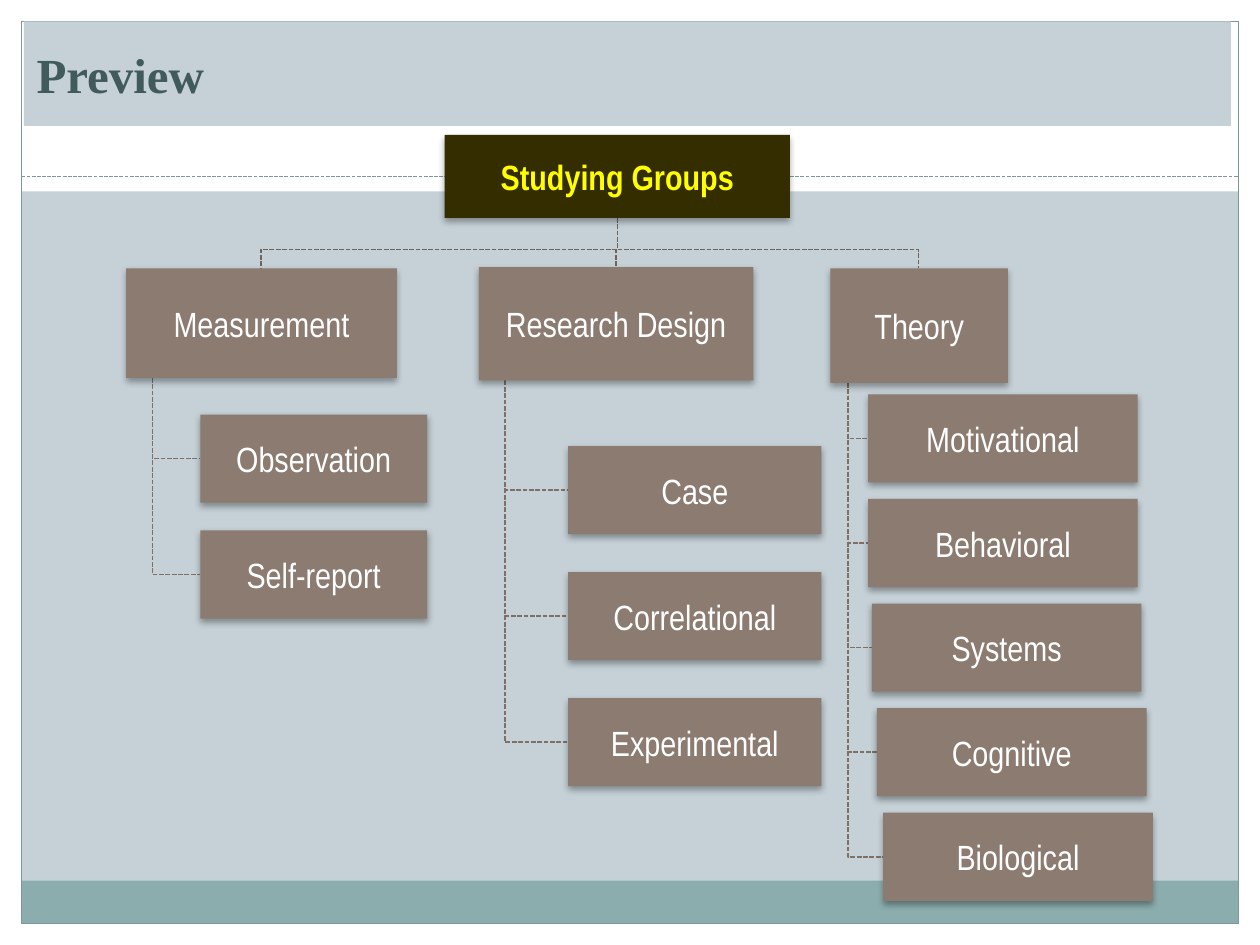
from dataclasses import dataclass
from typing import NamedTuple

from lxml.etree import SubElement
from pptx import Presentation
from pptx.dml.color import RGBColor as Color
from pptx.enum.dml import MSO_LINE_DASH_STYLE as Dash
from pptx.enum.shapes import MSO_CONNECTOR as Link, MSO_SHAPE as Preset
from pptx.enum.text import MSO_ANCHOR as Anchor, MSO_AUTO_SIZE as AutoSize, PP_ALIGN as Align
from pptx.oxml.ns import qn
from pptx.util import Pt

SCALE = 9144
BUS_DROP = 25


@dataclass(frozen=True)
class Theme:
    """Colours, fonts and type sizes of the slide."""
    paper: str = "C5D1D7"
    white: str = "FFFFFF"
    footer: str = "8CADAE"
    rule: str = "7C999A"
    title: str = "415B5C"
    root: str = "332D00"
    root_text: str = "FFFF00"
    node: str = "8C7B70"
    bus: str = "70635A"
    twig: str = "7F7066"
    title_font: str = "Times New Roman"
    node_font: str = "Arial Narrow"
    title_size: int = 28
    node_size: int = 20
    rule_width: float = 0.75
    link_width: float = 0.9


THEME = Theme()


class Box(NamedTuple):
    """A rectangle in px."""
    left: int
    top: int
    width: int
    height: int

    @property
    def bottom(self):
        """Return the lower edge."""
        return self.top + self.height

    @property
    def center(self):
        """Return the horizontal middle."""
        return self.left + self.width // 2

    @property
    def middle(self):
        """Return the vertical middle."""
        return self.top + self.height // 2

    def emu(self):
        """Return the four lengths in EMU."""
        return [value * SCALE for value in self]


def style_line(line, color, width, dash=None):
    """Set the colour, width and dash of a line."""
    line.color.rgb = Color.from_string(color)
    line.width = Pt(width)
    if dash:
        line.dash_style = dash


def add_panel(page, box, fill=None, line=None):
    """Add a flat rectangle."""
    panel = page.shapes.add_shape(Preset.RECTANGLE, *box.emu())
    panel.shadow.inherit = False
    if fill:
        panel.fill.solid()
        panel.fill.fore_color.rgb = Color.from_string(fill)
    else:
        panel.fill.background()
    if line:
        style_line(panel.line, line, THEME.rule_width)
    else:
        panel.line.fill.background()
    return panel


def write(frame, text, *, font, size, color, bold=False, align=Align.LEFT):
    """Write one formatted paragraph, vertically centred."""
    frame.word_wrap = True
    frame.auto_size = AutoSize.NONE
    frame.vertical_anchor = Anchor.MIDDLE
    para = frame.paragraphs[0]
    para.alignment = align
    span = para.add_run()
    span.text = text
    span.font.name = font
    span.font.size = Pt(size)
    span.font.bold = bold
    span.font.color.rgb = Color.from_string(color)


def add_soft_shadow(shape):
    """Give a shape a soft shadow that falls downwards."""
    effects = shape.element.spPr.find(qn("a:effectLst"))
    shadow = SubElement(effects, qn("a:outerShdw"), blurRad=str(Pt(4)),
                        dist=str(Pt(2)), dir="5400000", rotWithShape="0")
    black = SubElement(shadow, qn("a:srgbClr"), val="000000")
    SubElement(black, qn("a:alpha"), val="35000")


def add_node(page, box, text, fill=THEME.node, color=THEME.white, bold=False):
    """Add a labelled box of the chart."""
    node = add_panel(page, box, fill)
    add_soft_shadow(node)
    frame = node.text_frame
    frame.margin_left = frame.margin_right = SCALE
    frame.margin_top = frame.margin_bottom = SCALE
    write(frame, text, font=THEME.node_font, size=THEME.node_size,
          color=color, bold=bold, align=Align.CENTER)


def add_path(page, points, color):
    """Add a dashed open path through the points."""
    builder = page.shapes.build_freeform(*points[0], scale=SCALE)
    builder.add_line_segments(points[1:], close=False)
    path = builder.convert_to_shape()
    path.shadow.inherit = False
    path.fill.background()
    style_line(path.line, color, THEME.link_width, Dash.SQUARE_DOT)


def add_frame(page, box):
    """Add the white margins, footer band, border and dashed rule."""
    edge, footer, head = 17, 34, 152
    right, base = box.width - edge, box.height - edge
    inner = box.width - 2 * edge
    for margin in (Box(0, base, box.width, edge), Box(0, 0, box.width, head),
                   Box(0, 0, edge, box.height), Box(right, 0, edge, box.height)):
        add_panel(page, margin, THEME.white)
    add_panel(page, Box(edge, base - footer, inner, footer), THEME.footer)
    add_panel(page, Box(edge, edge, inner, base - edge), line=THEME.rule)
    height = head - 12
    ends = [value * SCALE for value in (edge, height, right, height)]
    rule = page.shapes.add_connector(Link.STRAIGHT, *ends)
    style_line(rule.line, THEME.rule, THEME.rule_width, Dash.SQUARE_DOT)
    SubElement(rule.element.spPr, qn("a:effectLst"))


def add_title(page, box, text):
    """Place the title in its band, above the frame."""
    title = page.shapes.title
    title.left, title.top, title.width, title.height = box.emu()
    title.fill.solid()
    title.fill.fore_color.rgb = Color.from_string(THEME.paper)
    write(title.text_frame, text, font=THEME.title_font, size=THEME.title_size,
          color=THEME.title, bold=True)
    title.element.getparent().append(title.element)


def add_branch(page, root, box, text, first, pitch, leaves):
    """Add a branch under the root; leaves pair a label with a shift to the right."""
    bus = root.bottom + BUS_DROP
    add_path(page, [(root.center, root.bottom), (root.center, bus),
                    (box.center, bus), (box.center, box.top)], THEME.bus)
    trunk = box.left + box.width // 10
    for row, (label, shift) in enumerate(leaves):
        leaf = first._replace(left=first.left + shift, top=first.top + row * pitch)
        add_path(page, [(trunk, box.bottom), (trunk, leaf.middle),
                        (leaf.left, leaf.middle)], THEME.twig)
        add_node(page, leaf, label)
    add_node(page, box, text)


def add_chart_tree(page, root):
    """Add the root and its three branches."""
    add_branch(page, root, Box(100, 213, 215, 87), "Measurement",
               Box(159, 329, 180, 70), 92, [("Observation", 0), ("Self-report", 0)])
    add_branch(page, root, Box(380, 212, 218, 90), "Research Design",
               Box(451, 354, 201, 70), 100,
               [("Case", 0), ("Correlational", 0), ("Experimental", 0)])
    add_branch(page, root, Box(659, 213, 141, 91), "Theory",
               Box(689, 313, 214, 70), 83,
               [("Motivational", 0), ("Behavioral", 0), ("Systems", 3),
                ("Cognitive", 7), ("Biological", 12)])
    add_node(page, root, "Studying Groups", THEME.root, THEME.root_text, bold=True)


def main():
    """Build and save the deck."""
    deck = Presentation()
    area = Box(0, 0, 1000, 750)
    deck.slide_width, deck.slide_height = area.emu()[2:]
    page = deck.slides.add_slide(deck.slide_layouts[5])
    page.background.fill.solid()
    page.background.fill.fore_color.rgb = Color.from_string(THEME.paper)
    add_frame(page, area)
    add_title(page, Box(19, 17, 958, 83), "Preview")
    add_chart_tree(page, Box(353, 107, 274, 66))
    deck.save("out.pptx")


if __name__ == "__main__":
    main()
